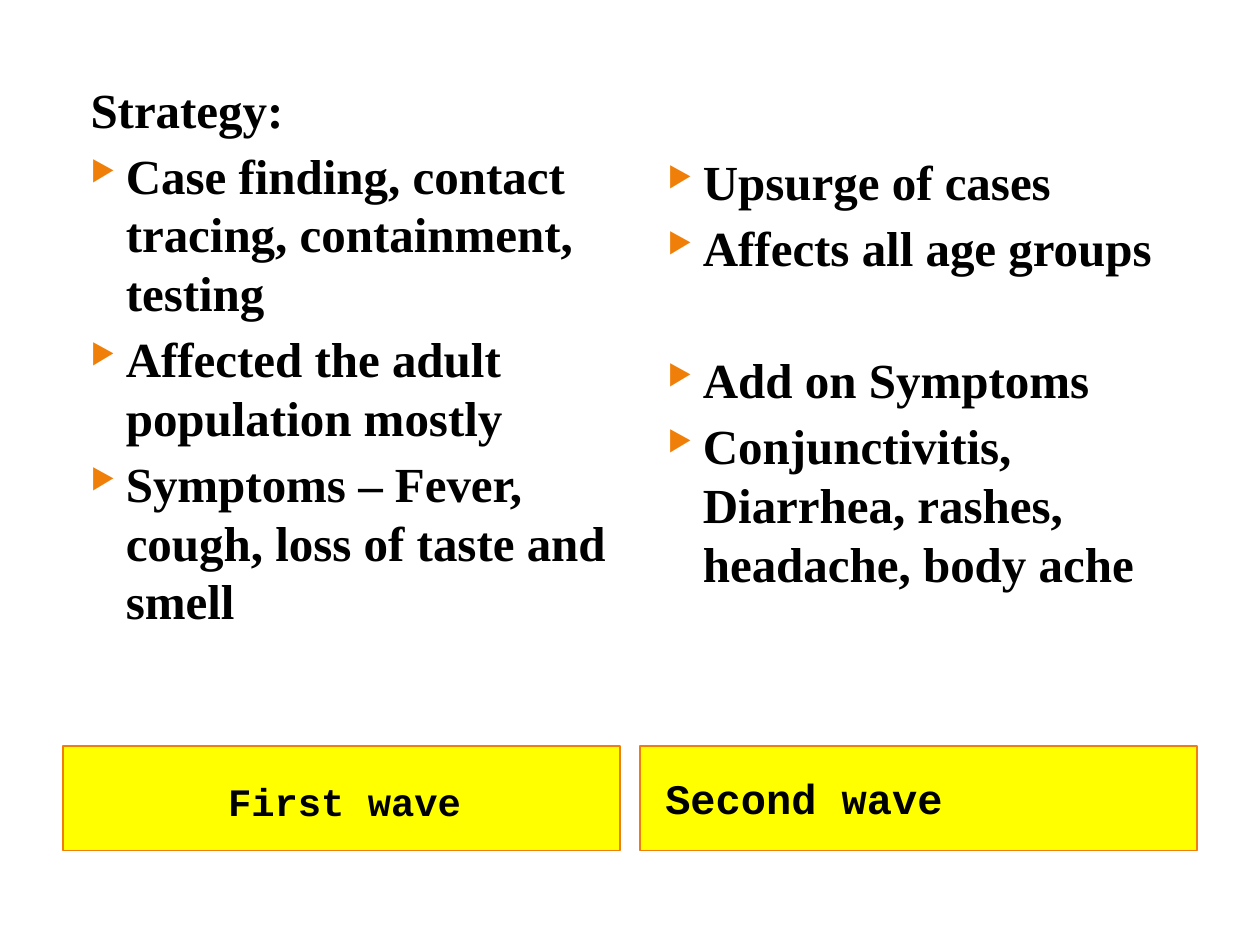
import pptx
import pptx.util
import pptx.dml.color
import pptx.enum.shapes
import pptx.enum.text
from lxml import etree

Inches, Pt = pptx.util.Inches, pptx.util.Pt
COLORS = {"text": "000000", "label": "FFFF00", "accent": "F07F09"}
RGB = {part: pptx.dml.color.RGBColor.from_string(c) for part, c in COLORS.items()}

deck = pptx.Presentation()
deck.slide_width, deck.slide_height = Inches(10), Inches(7.5)
slide = deck.slides.add_slide(deck.slide_layouts[6])

# Two equal columns between the side margins
MARGIN, GUTTER = 0.5, 0.16
COLUMN = (10 - 2 * MARGIN - GUTTER) / 2


def style(paragraph, font_name, size):
    paragraph.font.name = font_name
    paragraph.font.size = Pt(size)
    paragraph.font.bold = True
    paragraph.font.color.rgb = RGB["text"]


def add_bullet(properties):
    color = etree.SubElement(properties, pptx.oxml.ns.qn("a:buClr"))
    etree.SubElement(color, pptx.oxml.ns.qn("a:srgbClr"), val=COLORS["accent"])
    etree.SubElement(properties, pptx.oxml.ns.qn("a:buSzPct"), val="57000")
    etree.SubElement(properties, pptx.oxml.ns.qn("a:buChar"), char="▶")


# Each wave: label, label size, label indent, label top inset, list top, list height, items
# Each item: text, bulleted, space before, line spacing
waves = [
    ("First wave", 22.2, 1.11, 0.1, 0.58, 5.31, [
        ("Strategy:", False, 0, 1.0),
        ("Case finding, contact tracing, containment, testing", True, 4, 1.0),
        ("Affected the adult population mostly", True, 4, 1.0),
        ("Symptoms – Fever, cough, loss of taste and smell", True, 4, 1.0),
    ]),
    ("Second wave", 24, 0, 0.05, 0.92, 4.31, [
        ("Upsurge of cases", True, 0, 1.5),
        ("Affects all age groups", True, 4, 1.0),
        ("Add on Symptoms", True, 42, 1.0),
        ("Conjunctivitis, Diarrhea, rashes, headache, body ache", True, 4, 1.0),
    ]),
]

for column, (wave, size, indent, inset, top, height, items) in enumerate(waves):
    left = Inches(MARGIN + column * (COLUMN + GUTTER))

    # Yellow label below the list
    label = slide.shapes.add_shape(
        pptx.enum.shapes.MSO_SHAPE.RECTANGLE, left, Inches(5.92), Inches(COLUMN), Inches(0.83))
    label.shadow.inherit = False
    label.fill.solid()
    label.fill.fore_color.rgb = RGB["label"]
    label.line.color.rgb = RGB["accent"]
    label.line.width = Pt(0.75)
    label_text = label.text_frame
    label_text.margin_left = Inches(0.2 + indent)
    label_text.margin_top = Inches(inset)
    label_text.vertical_anchor = pptx.enum.text.MSO_ANCHOR.MIDDLE
    label_text.text = wave
    label_text.paragraphs[0].alignment = pptx.enum.text.PP_ALIGN.LEFT
    style(label_text.paragraphs[0], "Courier New", size)

    # Facts about the wave
    facts = slide.shapes.add_textbox(left, Inches(top), Inches(COLUMN), Inches(height)).text_frame
    facts.word_wrap = True
    for row, (text, bulleted, space, spacing) in enumerate(items):
        fact = facts.add_paragraph() if row else facts.paragraphs[0]
        fact.text = text
        fact.line_spacing = spacing
        fact.space_before = Pt(space)
        properties = fact._p.get_or_add_pPr()
        properties.set("marL", str(Inches(0.4)))
        properties.set("indent", str(Inches(-0.28)))
        if bulleted:
            add_bullet(properties)
        style(fact, "Times New Roman", 28)

deck.save("out.pptx")
